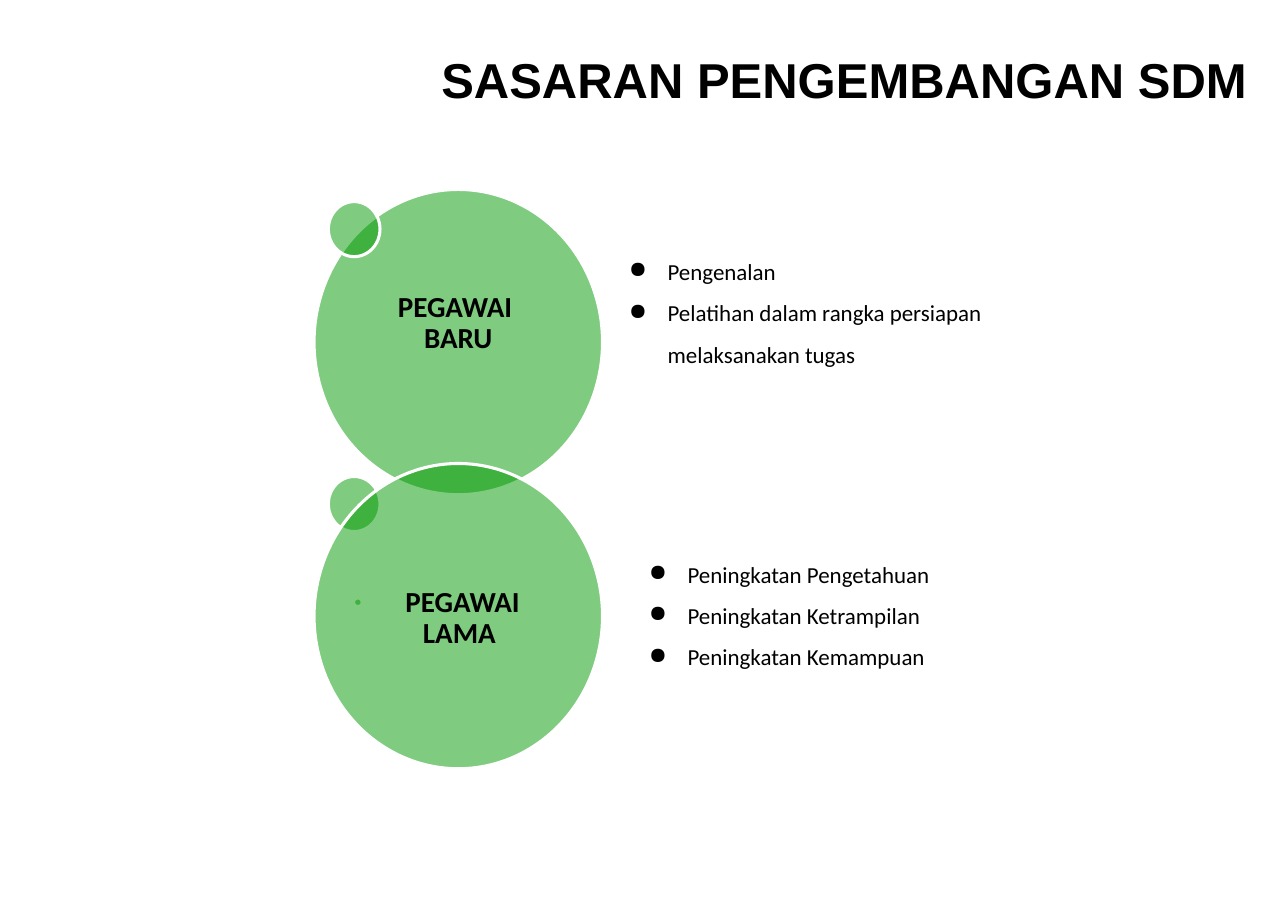
from lxml import etree
from pptx import Presentation
from pptx import util as u
from pptx.dml.color import RGBColor
from pptx.enum import shapes, text
from pptx.oxml import ns

HUES = {"green": "009900", "white": "FFFFFF", "black": "000000"}
PITCH = 6.32
GROUPS = [
    {"label": ["PEGAWAI ", "BARU"], "name": (1.7, 2.46, 3.25, 1.27),
     "items": [("Pengenalan", 0.9),
               ("Pelatihan dalam rangka persiapan melaksanakan tugas", 1.5)],
     "list": (6.88, 2.06, 10.24, 1.63),
     "discs": [(0, 0, 6.65, 7.04), (0.33, 0.28, 1.19, 1.27)]},
    {"label": ["PEGAWAI LAMA "], "name": (1.37, 2.92, 4.11, 1.32),
     "items": [("Peningkatan Pengetahuan", 1.5),
               ("Peningkatan Ketrampilan", 1.5),
               ("Peningkatan Kemampuan", 1.5)],
     "list": (7.34, 1.96, 9.14, 2.77),
     "discs": [(0.33, 0.3, 1.19, 1.27), (0.91, 3.1, 0.2, 0.2),
               (0, 0, 6.65, 7.04)]},
]


def hue(name):
    """Return a named colour."""
    return RGBColor.from_string(HUES[name])


def shift(box, left, top):
    """Move a box by the given offset."""
    return box[0] + left, box[1] + top, box[2], box[3]


def add_sub(node, tag, **attrs):
    """Append a drawing element to a node."""
    return etree.SubElement(node, ns.qn(tag), **attrs)


def add_disc(slide, box):
    """Draw a half-clear green disc with a white rim."""
    disc = slide.shapes.add_shape(shapes.MSO_SHAPE.OVAL, *map(u.Cm, box))
    disc.shadow.inherit = False
    disc.fill.solid()
    disc.fill.fore_color.rgb = hue("green")
    tint = disc.fill._xPr.find(ns.qn("a:solidFill"))[0]
    add_sub(tint, "a:alpha", val="50000")
    disc.line.color.rgb = hue("white")
    disc.line.width = u.Pt(2)


def add_text(slide, box, lines, size, font, bold, align, inset=(0, 0.06)):
    """Place a middle-anchored text box and return its paragraphs."""
    frame = slide.shapes.add_textbox(*map(u.Cm, box)).text_frame
    frame.word_wrap = True
    frame.vertical_anchor = text.MSO_ANCHOR.MIDDLE
    frame.margin_left = frame.margin_right = u.Cm(inset[0])
    frame.margin_top = frame.margin_bottom = u.Cm(inset[1])
    frame.text = "\n".join(lines)
    for para in frame.paragraphs:
        para.alignment = align
        for run in para.runs:
            run.font.size = u.Pt(size)
            run.font.name = font
            run.font.bold = bold
            run.font.color.rgb = hue("black")
    return frame.paragraphs


def add_list(slide, box, items):
    """Place a bulleted list with a line spacing for each item."""
    paras = add_text(slide, box, [item for item, gap in items], 15,
                     "Calibri", False, text.PP_ALIGN.LEFT)
    for para, (item, gap) in zip(paras, items):
        para.line_spacing = gap
        props = para._p.get_or_add_pPr()
        props.set("marL", str(u.Cm(1.27)))
        props.set("indent", str(u.Cm(-0.89)))
        add_sub(add_sub(props, "a:buClr"), "a:srgbClr", val=HUES["black"])
        add_sub(props, "a:buChar", char="●")


def add_group(slide, left, top, group):
    """Draw one staff group: its discs, label and list."""
    for disc in group["discs"]:
        add_disc(slide, shift(disc, left, top))
    name = shift(group["name"], left, top)
    for para in add_text(slide, name, group["label"], 19, "Calibri", True,
                         text.PP_ALIGN.CENTER, (0, 0.08)):
        para.line_spacing = 0.9
    add_list(slide, shift(group["list"], left, top), group["items"])


def main():
    """Build the slide and save it."""
    deck = Presentation()
    deck.slide_width, deck.slide_height = u.Cm(29.69), u.Cm(21.01)
    slide = deck.slides.add_slide(deck.slide_layouts[6])
    add_text(slide, (2.29, 0.91, 26.75, 1.83), ["SASARAN PENGEMBANGAN SDM"],
             32, "Arial", True, text.PP_ALIGN.RIGHT, (0.28, 0.15))
    for row, group in enumerate(GROUPS):
        add_group(slide, 7.24, 4.37 + row * PITCH, group)
    deck.save("out.pptx")


if __name__ == "__main__":
    main()
